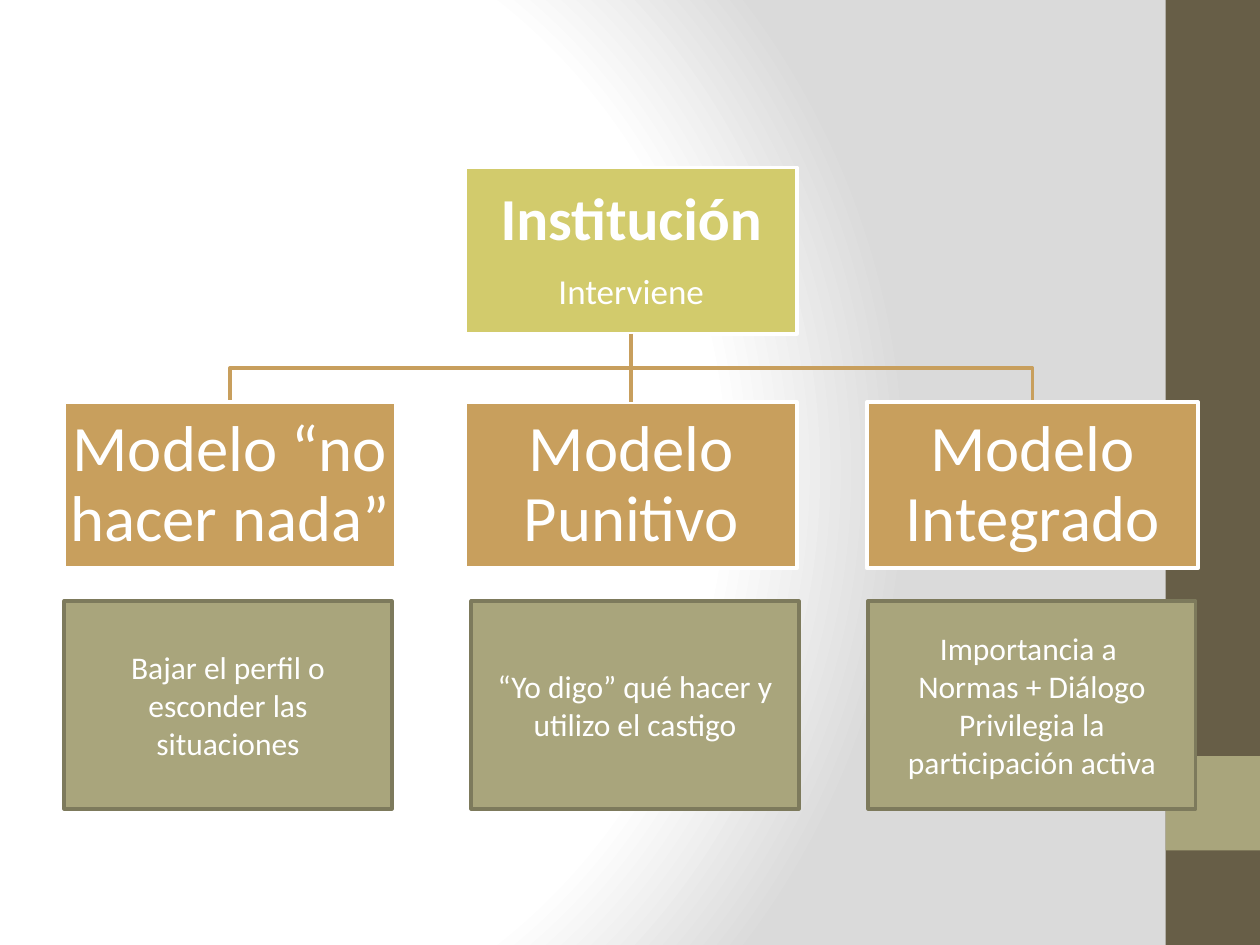
from lxml.etree import SubElement
from pptx import Presentation
from pptx.dml.color import RGBColor
from pptx.enum.shapes import MSO_CONNECTOR, MSO_SHAPE
from pptx.enum.text import MSO_ANCHOR, PP_ALIGN
from pptx.oxml.ns import qn
from pptx.util import Inches, Pt

WHITE = RGBColor(0xFF, 0xFF, 0xFF)
GREY = RGBColor(0xDA, 0xDA, 0xDA)
BROWN = RGBColor(0x67, 0x5E, 0x47)
SAGE = RGBColor(0xA9, 0xA5, 0x7C)
OLIVE = RGBColor(0x7D, 0x7A, 0x5C)
LIME = RGBColor(0xD2, 0xCB, 0x6C)
OCHRE = RGBColor(0xC8, 0x9F, 0x5D)

WIDTH, HEIGHT, STEP = 2.63, 1.32, 3.185
LEFT, ROOT_TOP, MODEL_TOP = 0.51, 1.33, 3.19

MODELS = [
    ("Modelo “no hacer nada”", 0.51,
     ["Bajar el perfil o esconder las situaciones"]),
    ("Modelo Punitivo", 3.74,
     ["“Yo digo” qué hacer y utilizo el castigo"]),
    ("Modelo Integrado", 6.89,
     ["Importancia a ", "Normas + Diálogo",
      "Privilegia la participación activa"]),
]


def paint_back(slide):
    """Fill the background with a round gradient from white to grey."""
    slide.background.fill.gradient()
    grad = slide.background._cSld.find(".//" + qn("a:gradFill"))
    for child in list(grad):
        grad.remove(child)
    stops = SubElement(grad, qn("a:gsLst"))
    for pos, color in ((0, WHITE), (75, WHITE), (100, GREY)):
        stop = SubElement(stops, qn("a:gs"), pos=str(pos * 1000))
        SubElement(stop, qn("a:srgbClr"), val=str(color))
    way = SubElement(grad, qn("a:path"), {"path": "circle"})
    SubElement(way, qn("a:fillToRect"),
               l="20000", t="50000", r="100000", b="50000")


def add_box(slide, left, top, width, height, fill, line=None):
    """Add a flat rectangle, outlined when a line colour is given."""
    box = slide.shapes.add_shape(
        MSO_SHAPE.RECTANGLE,
        Inches(left), Inches(top), Inches(width), Inches(height))
    box.shadow.inherit = False
    box.fill.solid()
    box.fill.fore_color.rgb = fill
    if line is None:
        box.line.fill.background()
    else:
        box.line.color.rgb = line
        box.line.width = Pt(2)
    return box


def add_text(box, text, size, bold=False, inset=None, space=None, after=0):
    """Add a centred paragraph to a box."""
    frame = box.text_frame
    frame.word_wrap = True
    frame.vertical_anchor = MSO_ANCHOR.MIDDLE
    if inset is not None:
        frame.margin_left = frame.margin_right = Inches(inset)
        frame.margin_top = frame.margin_bottom = Inches(inset)
    para = frame.add_paragraph() if frame.text else frame.paragraphs[0]
    para.alignment = PP_ALIGN.CENTER
    para.line_spacing = space
    para.space_after = Pt(after)
    run = para.add_run()
    run.text = text
    run.font.name = "Calibri"
    run.font.size = Pt(size)
    run.font.bold = bold
    run.font.color.rgb = WHITE


def style_line(line):
    """Give a branch its colour and width."""
    line.color.rgb = OCHRE
    line.width = Pt(2)


def add_elbow(slide, start, end):
    """Draw a branch that turns halfway down."""
    (x, top), (goal, low) = start, end
    mid = (top + low) / 2
    pen = slide.shapes.build_freeform(Inches(x), Inches(top))
    pen.add_line_segments(
        [(Inches(a), Inches(b)) for a, b in ((x, mid), (goal, mid), end)],
        close=False)
    shape = pen.convert_to_shape()
    shape.shadow.inherit = False
    shape.fill.background()
    style_line(shape.line)


def add_stem(slide, root, model):
    """Join the root to the model straight below it."""
    stem = slide.shapes.add_connector(MSO_CONNECTOR.STRAIGHT, 0, 0, 0, 0)
    stem.begin_connect(root, 2)
    stem.end_connect(model, 0)
    SubElement(stem._element.spPr, qn("a:effectLst"))
    style_line(stem.line)


def main():
    """Build the slide and save it."""
    deck = Presentation()
    deck.slide_width, deck.slide_height = Inches(10), Inches(7.5)
    slide = deck.slides.add_slide(deck.slide_layouts[6])
    paint_back(slide)
    add_box(slide, 9.25, 0, 0.75, 7.5, BROWN)
    add_box(slide, 9.25, 6, 0.75, 0.75, SAGE)

    hub = LEFT + STEP + WIDTH / 2
    for side in (1, -1):
        add_elbow(slide, (hub, ROOT_TOP + HEIGHT),
                  (hub + side * STEP, MODEL_TOP))

    root = add_box(slide, LEFT + STEP, ROOT_TOP, WIDTH, HEIGHT, LIME, WHITE)
    add_text(root, "Institución", 34, bold=True, inset=0.02, space=0.9,
             after=12)
    add_text(root, "Interviene", 20, inset=0.02, space=0.9, after=7)

    boxes = []
    for i, (name, left, notes) in enumerate(MODELS):
        box = add_box(slide, LEFT + i * STEP, MODEL_TOP, WIDTH, HEIGHT,
                      OCHRE, WHITE)
        add_text(box, name, 37, inset=0.03, space=0.9, after=13)
        boxes.append(box)
        card = add_box(slide, left, 4.77, 2.6, 1.65, SAGE, OLIVE)
        for note in notes:
            add_text(card, note, 18)
    add_stem(slide, root, boxes[1])
    deck.save("out.pptx")


if __name__ == "__main__":
    main()
